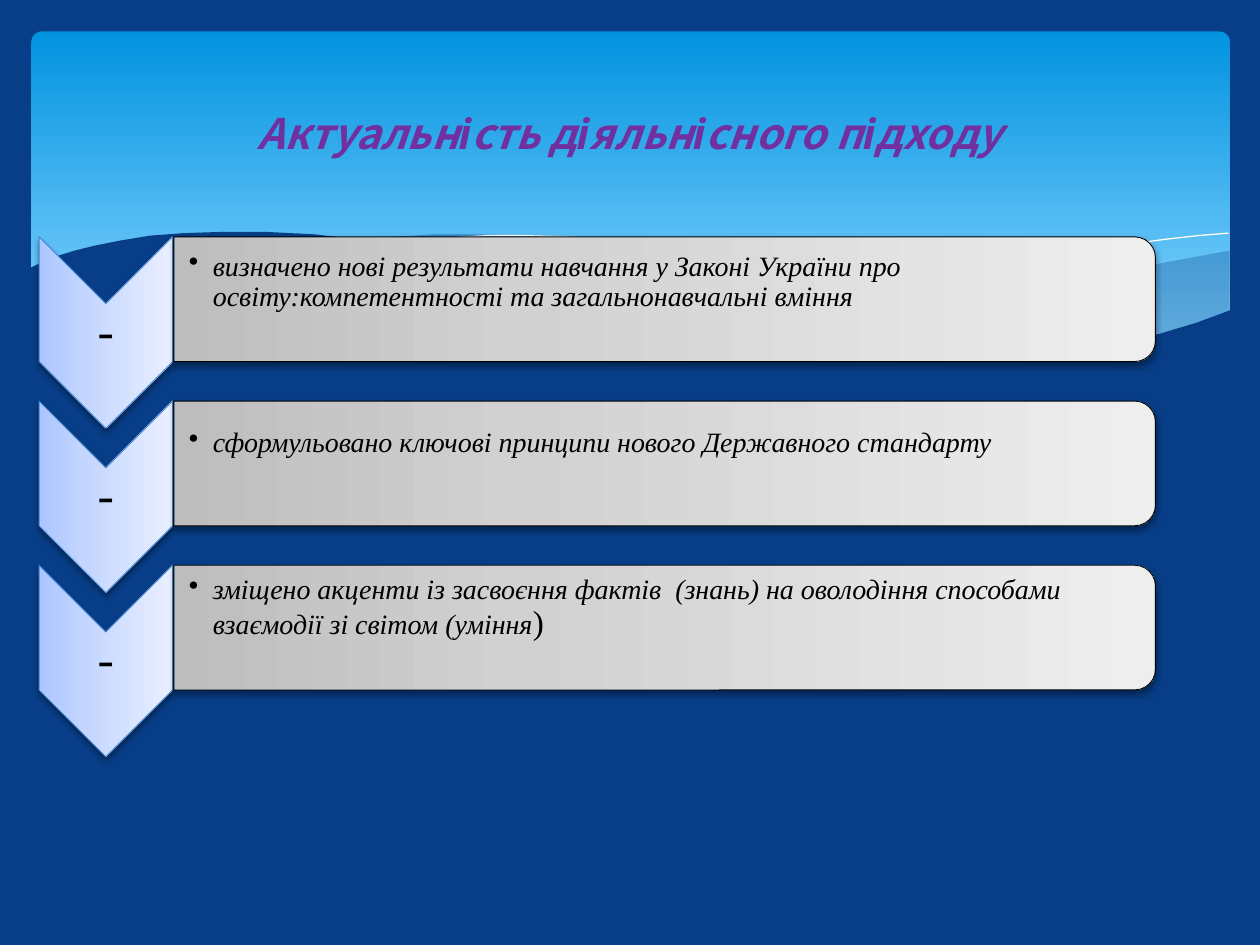
from lxml.etree import SubElement
from pptx import Presentation
from pptx.dml.color import RGBColor
from pptx.enum.shapes import MSO_SHAPE
from pptx.enum.text import MSO_ANCHOR, PP_ALIGN
from pptx.oxml import parse_xml
from pptx.oxml.ns import nsdecls, qn
from pptx.util import Inches, Pt

COLORS = {
    "navy": "073E87", "sky": "0293E0", "pale_sky": "83D3FE",
    "white": "FFFFFF", "black": "000000", "purple": "7030A0", "blue": "4081D2",
}
PANEL = [(0, COLORS["sky"]), (90, COLORS["pale_sky"])]
CHEVRON = [(0, "ACC6FF"), (35, "C4D6FF"), (100, "E9EFFF")]
BAR = [(0, "BDBDBD"), (35, "D1D1D1"), (100, "EEEEEE")]
SERIF = "Times New Roman"

# Waves, as (column, row) points
GHOST = [(97.5, 19.9), (94.8, 20.4), (92.1, 20.9), (89.1, 21.6), (86.1, 22.3),
         (80.5, 23.7), (75.3, 24.8), (70.6, 25.7), (66.1, 26.5), (69.1, 26.9),
         (73.2, 27.4), (76.9, 27.7), (80.3, 27.8), (83.5, 27.7), (87.2, 27.4),
         (90.5, 26.9), (93.5, 26.1), (96.3, 25.2), (97.6, 24.7), (97.6, 19.9)]
BAND = [(89.3, 27.3), (86.6, 26.9), (80.7, 26), (74.1, 24.8), (66.8, 23.1),
        (59.8, 21.4), (55.5, 20.5), (51.4, 19.8), (46.5, 19.1), (42, 18.7),
        (38, 18.6), (34.4, 18.6), (31.3, 18.8), (28.6, 19.1), (34.2, 19.9),
        (40.4, 21.1), (49.1, 23.2), (56.6, 24.8), (63.4, 26.1), (69.5, 27),
        (74.8, 27.6), (79.6, 27.8), (84.8, 27.7), (89.3, 27.3)]
LONG_LINE = [(30.9, 19.5), (32.8, 19.2), (35.3, 18.9), (38.7, 18.7),
             (41.6, 18.7), (45, 18.8), (48.9, 19), (53.3, 19.4), (58.2, 20),
             (63.6, 20.8), (69.5, 21.9), (76, 23.3), (83.1, 25.1), (90.7, 27.2)]
SHORT_LINE = [(61.3, 25.7), (65.2, 24.6), (69.5, 23.5), (74.8, 22.3),
              (80.6, 21), (86.6, 19.9), (89.5, 19.4), (92.4, 19), (95.1, 18.7),
              (97.5, 18.5)]
FRONT = [(97.7, 24.6), (95, 25.6), (92, 26.5), (88.7, 27.1), (85, 27.5),
         (80.9, 27.7), (76.1, 27.5), (70.8, 27), (64.7, 26.2), (57.9, 25),
         (50.3, 23.3), (44.7, 22), (39.1, 20.7), (33.9, 19.7), (29.2, 19.1),
         (25, 18.6), (21.1, 18.4), (17.7, 18.4), (14.6, 18.5), (11.9, 18.7),
         (9.5, 19.1), (7.5, 19.5), (5.9, 19.9), (4.6, 20.3), (3.6, 20.7),
         (2.3, 21.3), (2.3, 32.9), (97.7, 32.9)]

# Each item: space above its text in rows, then runs as (text, size, italic)
ITEMS = [
    (0.7, [("визначено нові результати навчання у Законі України про "
            "освіту:компетентності та загальнонавчальні вміння", 16, True)]),
    (1.7, [("сформульовано ключові принципи нового Державного стандарту", 16, True)]),
    (0.3, [("зміщено акценти із засвоєння фактів  (знань) на оволодіння "
            "способами взаємодії зі світом (уміння", 16, True), (")", 19, False)]),
]
FIRST_ROW, PITCH = 18.75, 13.03


def unit(n):
    """One column or row is a tenth of an inch: 100 columns by 75 rows."""
    return Inches(n / 10)


def rgb(color):
    return RGBColor.from_string(color)


class Deck:
    def __init__(self):
        self.prs = Presentation()
        self.prs.slide_width, self.prs.slide_height = unit(100), unit(75)
        self.s = self.prs.slides.add_slide(self.prs.slide_layouts[6])
        fill = self.s.background.fill
        fill.solid()
        fill.fore_color.rgb = rgb(COLORS["navy"])

    def gradient_shape(self, kind, box, stops, angle, rotation=0, line=None):
        sp = self.s.shapes.add_shape(kind, *map(unit, box))
        sp.rotation = rotation
        sp.shadow.inherit = False
        sp.fill.background()
        gs = "".join(f'<a:gs pos="{pos * 1000}"><a:srgbClr val="{c}"/></a:gs>'
                     for pos, c in stops)
        spPr = sp._element.spPr
        spPr.replace(spPr.find(qn("a:noFill")), parse_xml(
            f'<a:gradFill {nsdecls("a")} rotWithShape="1"><a:gsLst>{gs}</a:gsLst>'
            f'<a:lin ang="{angle * 60000}" scaled="0"/></a:gradFill>'))
        if line:
            sp.line.color.rgb = rgb(line)
            sp.line.width = Pt(0.5)
            self.drop_shadow(spPr)
        else:
            sp.line.fill.background()
        return sp

    def drop_shadow(self, spPr):
        shadow = SubElement(spPr.find(qn("a:effectLst")), qn("a:outerShdw"),
                            blurRad=str(Pt(3.5)), dist=str(Pt(2)),
                            dir="5400000", rotWithShape="0")
        color = SubElement(shadow, qn("a:srgbClr"), val=COLORS["black"])
        SubElement(color, qn("a:alpha"), val="38000")

    def wave(self, points, fill=None, alpha=100):
        """Filled outline, or an open white hairline when fill is None."""
        pts = [(unit(x), unit(y)) for x, y in points]
        fb = self.s.shapes.build_freeform(*pts[0])
        fb.add_line_segments(pts[1:], close=fill is not None)
        sp = fb.convert_to_shape()
        sp.shadow.inherit = False
        if fill is None:
            sp.fill.background()
            sp.line.color.rgb = rgb(COLORS["white"])
            sp.line.width = Pt(0)
            return
        sp.line.fill.background()
        sp.fill.solid()
        sp.fill.fore_color.rgb = rgb(fill)
        color = sp._element.spPr.find(qn("a:solidFill"))[0]
        SubElement(color, qn("a:alpha"), val=str(alpha * 1000))

    def text(self, box, runs, font=SERIF, color=COLORS["black"], bold=False,
             align=PP_ALIGN.CENTER, anchor=MSO_ANCHOR.MIDDLE,
             insets=(0.2, 0.2, 0.2, 0.2), spacing=0.9):
        tf = self.s.shapes.add_textbox(*map(unit, box)).text_frame
        tf.word_wrap = True
        tf.vertical_anchor = anchor
        (tf.margin_left, tf.margin_top,
         tf.margin_right, tf.margin_bottom) = map(unit, insets)
        p = tf.paragraphs[0]
        p.alignment, p.line_spacing = align, spacing
        p.font.name, p.font.bold = font, bold
        p.font.color.rgb = rgb(color)
        for words, size, italic in runs:
            r = p.add_run()
            r.text = words
            r.font.size, r.font.italic = Pt(size), italic
        return p

    def bullet(self, p):
        pPr = p._p.get_or_add_pPr()
        pPr.set("marL", str(unit(1.9)))
        pPr.set("indent", str(-unit(1.9)))
        bu = parse_xml(f'<a:buChar {nsdecls("a")} char="•"/>')
        pPr.find(qn("a:defRPr")).addprevious(bu)

    def item(self, top, space_above, runs):
        self.gradient_shape(MSO_SHAPE.CHEVRON, (0.8, top + 2.35, 15.2, 10.6),
                            CHEVRON, 270, 90, COLORS["blue"])
        self.text((3.1, top + 5.35, 10.6, 4.6), [("-", 28, False)])
        self.gradient_shape(MSO_SHAPE.ROUND_2_SAME_RECTANGLE,
                            (47.8, top - 33.95, 9.9, 77.9),
                            BAR, 270, 90, COLORS["black"])
        p = self.text((13.8, top + 0.55, 77.4, 8.9), runs, align=PP_ALIGN.LEFT,
                      anchor=MSO_ANCHOR.TOP, insets=(1.2, space_above, 0.1, 0.1))
        self.bullet(p)


def main():
    deck = Deck()
    # Sky panel and waves
    panel = deck.gradient_shape(MSO_SHAPE.ROUNDED_RECTANGLE,
                                (2.5, 2.5, 95.1, 27), PANEL, 90)
    panel.adjustments[0] = 0.03
    deck.wave(GHOST, COLORS["navy"], 29)
    deck.wave(BAND, COLORS["navy"], 40)
    deck.wave(LONG_LINE)
    deck.wave(SHORT_LINE)
    deck.wave(FRONT, COLORS["navy"])
    # Title
    deck.text((5, 3.7, 90, 13.7), [("Актуальність діяльнісного підходу", 24, True)],
              font="Noto Sans CJK KR", color=COLORS["purple"], bold=True,
              insets=(1, 0.5, 1, 0.5), spacing=1.0)
    # Chevron list
    for i, (space_above, runs) in enumerate(ITEMS):
        deck.item(FIRST_ROW + i * PITCH, space_above, runs)
    deck.prs.save("out.pptx")


if __name__ == "__main__":
    main()
